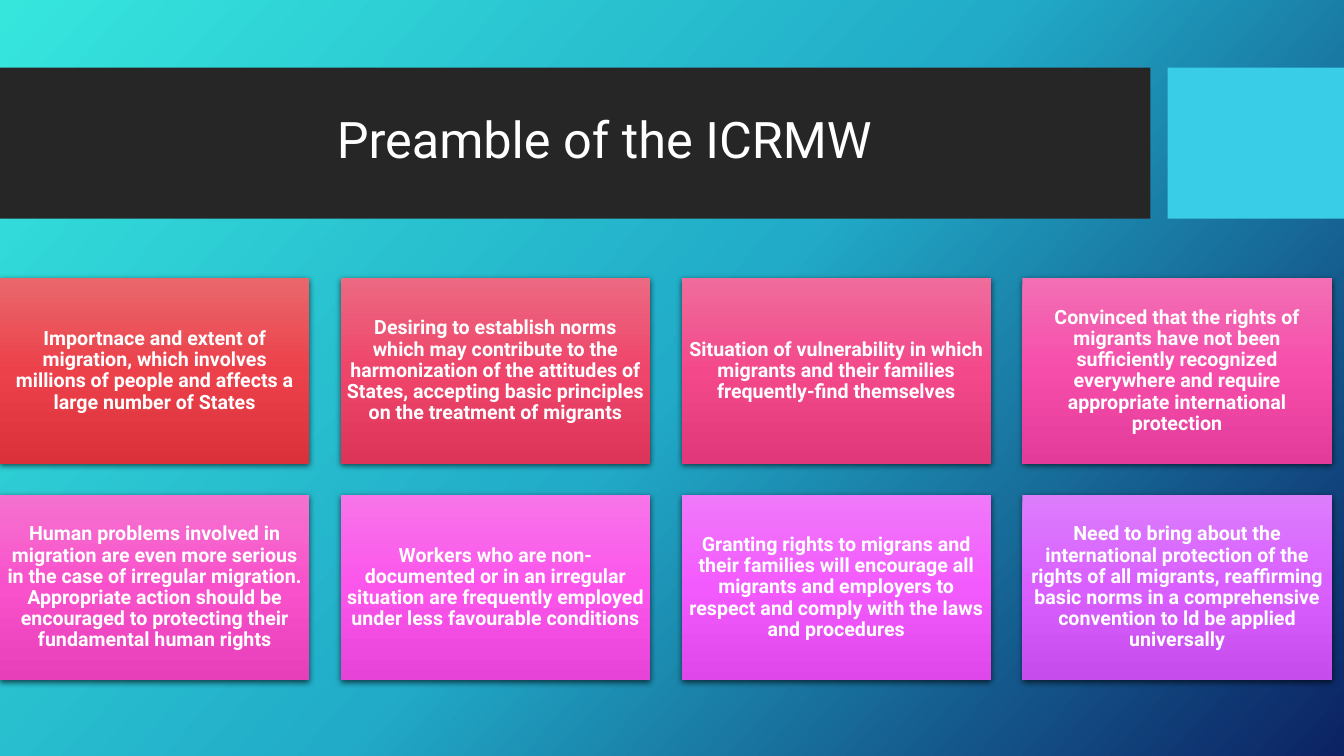
from lxml.etree import SubElement
from pptx import Presentation
from pptx.dml.color import RGBColor
from pptx.enum.shapes import MSO_SHAPE
from pptx.enum.text import MSO_ANCHOR, MSO_AUTO_SIZE, PP_ALIGN
from pptx.oxml.ns import qn
from pptx.util import Inches, Pt

# Content: card text with its top, middle and bottom gradient colours
TITLE = "Preamble of the ICRMW"
CARDS = [
    ("Importnace and extent of migration, which involves millions of people "
     "and affects a large number of States", ("E9676C", "EC414A", "DA313A")),
    ("Desiring to establish norms which may contribute to the harmonization of the attitudes "
     "of States, accepting basic principles on the treatment of migrants",
     ("EC6982", "EF456B", "DD345A")),
    ("Situation of vulnerability in which migrants and their families "
     "frequently-find themselves", ("EF6C9B", "F3498B", "E0387A")),
    ("Convinced that the rights of migrants have not been sufficiently recognized everywhere "
     "and require appropriate international protection", ("F26FB4", "F64DAB", "E33B99")),
    ("Human problems involved in migration are even more serious in the case of irregular "
     "migration. Appropriate action should be encouraged to protecting their fundamental "
     "human rights", ("F472CF", "F951CB", "E63FB9")),
    ("Workers who are non-documented or in an irregular situation are frequently employed "
     "under less favourable conditions", ("F775E9", "FB55EB", "E843D8")),
    ("Granting rights to migrans and their families will encourage all migrants and employers "
     "to respect and comply with the laws and procedures", ("F079F9", "F35AFE", "DF47EA")),
    ("Need to bring about the international protection of the rights of all migrants, "
     "reaffirming basic norms in a comprehensive convention to ld be applied universally",
     ("DC7DFC", "D960FF", "C64CEC")),
]

# Style
FONT = "Roboto"
WHITE = RGBColor(0xFF, 0xFF, 0xFF)
CHARCOAL = RGBColor(0x26, 0x26, 0x26)
SKY = RGBColor(0x39, 0xCD, 0xE7)
BACKGROUND = ("36E6DD", "21ABC8", "0C2263")

# Card grid, in inches
COLUMNS = 4
GRID_TOP = 2.76
CARD_WIDTH, CARD_HEIGHT = 3.07, 1.84
GAP = 0.31


def set_gradient(fill, owner, colours, angle):
    """Spread the colours evenly along a clockwise angle in degrees."""
    fill.gradient()
    gradient = owner.find(".//" + qn("a:gradFill"))
    stops = gradient.find(qn("a:gsLst"))
    stops.clear()
    for index, colour in enumerate(colours):
        position = index * 100000 // (len(colours) - 1)
        stop = SubElement(stops, qn("a:gs"), pos=str(position))
        SubElement(stop, qn("a:srgbClr"), val=colour)
    gradient.find(qn("a:lin")).set("ang", str(angle * 60000))


def add_shadow(shape):
    effects = shape.element.spPr.find(qn("a:effectLst"))
    shadow = SubElement(effects, qn("a:outerShdw"), blurRad=str(Pt(4.5)),
                        dist=str(Pt(1.5)), dir="5400000", algn="ctr", rotWithShape="0")
    colour = SubElement(shadow, qn("a:srgbClr"), val="000000")
    SubElement(colour, qn("a:alpha"), val="63000")


def add_rectangle(left, top, width, height):
    shape = page.shapes.add_shape(MSO_SHAPE.RECTANGLE, Inches(left), Inches(top),
                                  Inches(width), Inches(height))
    shape.shadow.inherit = False
    shape.line.fill.background()
    return shape


def write_text(shape, text, size, bold):
    frame = shape.text_frame
    frame.text = text
    frame.word_wrap = True
    frame.auto_size = MSO_AUTO_SIZE.NONE
    frame.vertical_anchor = MSO_ANCHOR.MIDDLE
    para = frame.paragraphs[0]
    para.alignment = PP_ALIGN.CENTER
    para.line_spacing = 0.9
    font = para.runs[0].font
    font.name, font.size, font.bold = FONT, Pt(size), bold
    font.color.rgb = WHITE


deck = Presentation()
deck.slide_width, deck.slide_height = Inches(13.33), Inches(7.5)
page = deck.slides.add_slide(deck.slide_layouts[5])
set_gradient(page.background.fill, page.element, BACKGROUND, 42)

# Title band and accent block
for left, width, colour in [(0, 11.41, CHARCOAL), (11.58, 1.75, SKY)]:
    band = add_rectangle(left, 0.67, width, 1.5)
    band.fill.solid()
    band.fill.fore_color.rgb = colour

# Title, brought in front of the band
title = page.shapes.title
title.left, title.top = Inches(0.74), Inches(0.82)
title.width, title.height = Inches(10.51), Inches(1.18)
write_text(title, TITLE, 36, False)
page.shapes.element.append(title.element)

# Cards
for index, (text, colours) in enumerate(CARDS):
    row, column = divmod(index, COLUMNS)
    card = add_rectangle(column * (CARD_WIDTH + GAP), GRID_TOP + row * (CARD_HEIGHT + GAP),
                         CARD_WIDTH, CARD_HEIGHT)
    set_gradient(card.fill, card.element, colours, 90)
    add_shadow(card)
    write_text(card, text, 14, True)
    frame = card.text_frame
    frame.margin_left = frame.margin_right = Inches(0.06)
    frame.margin_top = frame.margin_bottom = Inches(0.06)

deck.save("out.pptx")
